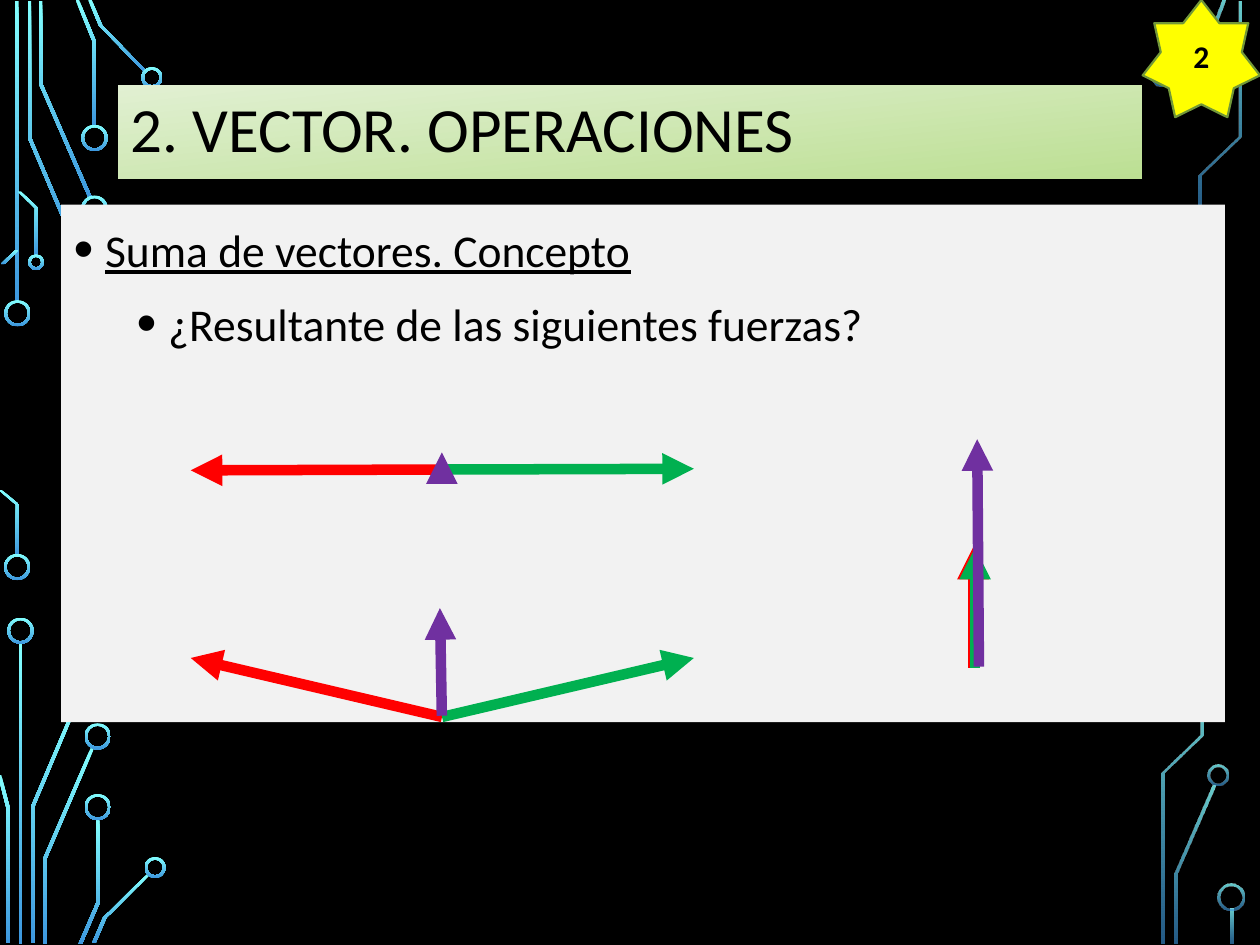
"""Build the slide on adding vectors, with circuit tracks around the edges."""
from lxml import etree
from pptx import Presentation
from pptx.dml import color
from pptx.enum import shapes, text
from pptx.oxml import ns
from pptx.util import Pt


def paint(fill, *colours, angle=270):
    if len(colours) == 1:
        fill.solid()
        fill.fore_color.rgb = color.RGBColor.from_string(colours[0])
        return
    fill.gradient()
    fill.gradient_angle = angle
    for stop, colour in zip(fill.gradient_stops, colours):
        stop.color.rgb = color.RGBColor.from_string(colour)


def write(p, content, size, align=text.PP_ALIGN.LEFT, bold=False, underline=False,
          spacing=1.0, before=0, indent=None):
    p.alignment, p.line_spacing, p.space_before = align, spacing, Pt(before)
    if indent is not None:
        ppr = p._p.get_or_add_pPr()
        ppr.set("marL", str(Pt(indent)))
        ppr.set("indent", str(Pt(-18)))
        etree.SubElement(ppr, ns.qn("a:buSzPct")).set("val", "125000")
        etree.SubElement(ppr, ns.qn("a:buFont")).set("typeface", "Arial")
        etree.SubElement(ppr, ns.qn("a:buChar")).set("char", "•")
    r = p.add_run()
    r.text = content
    r.font.name, r.font.size = "Calibri", Pt(size)
    r.font.bold, r.font.underline = bold, underline
    paint(r.font.fill, "000000")


prs = Presentation()
prs.slide_width, prs.slide_height = Pt(720), Pt(540)
s = prs.slides.add_slide(prs.slide_layouts[5])
paint(s.background.fill, "000000")

left_tracks = [
    [(8.6, 0.7), (8.6, 172.8)],
    [(15.8, 0.7), (15.8, 78.5), (43.2, 142.9)],
    [(22.3, 0.7), (22.3, 48), (50.4, 112.5)],
    [(43.2, 0), (52.9, 23.8), (52.9, 72)],
    [(50.4, 0), (56.5, 14.6), (82.1, 41)],
    [(0.4, 151), (9, 142.6)],
    [(-0.9, 280), (9.1, 288.4), (9.1, 317.5)],
    [(10, 109.4), (20, 119), (20, 146)],
    [(10.6, 367), (10.6, 539.3)],
    [(17.5, 538.6), (17.5, 461.5), (44.8, 397)],
    [(3.6, 538.6), (3.6, 461.5), (-1.2, 443)],
    [(24.5, 539.3), (24.5, 491), (52, 427)],
    [(44.8, 539.6), (54.9, 516.2), (54.9, 468)],
    [(52.6, 539), (58.8, 524.5), (84.5, 499)],
]
right_tracks = [
    [(666.9, 40), (693, 14.4), (698.4, 0)],
    [(671, 539.3), (671, 499), (692.6, 448.7)],
    [(684.9, 121.7), (684.9, 99.7), (707.2, 77.4), (707.2, 0.7)],
    [(664, 539.3), (664, 441.7), (685.6, 420), (685.6, 397.4)],
    [(702.9, 519), (702.9, 539.3)],
]
left_rings = [(10, 179, 15), (9.8, 324, 15), (54, 119.2, 15), (54, 78.8, 15),
              (86.8, 44.3, 12), (20.6, 149.8, 9), (11.7, 360.4, 15),
              (55.8, 420.8, 15), (55.8, 461.2, 15), (88.6, 495.7, 12)]
right_rings = [(663.8, 43.6, 12), (696, 443, 12), (703.4, 512.6, 15)]

for tracks, rings, opacities in ((left_tracks, left_rings, (100, 100)),
                                 (right_tracks, right_rings, (80, 60))):
    parts = []
    for track in tracks:
        edge = track + [(x + 2, y) for x, y in reversed(track)]
        points = [(Pt(x), Pt(y)) for x, y in edge]
        builder = s.shapes.build_freeform(*points[0])
        builder.add_line_segments(points[1:], close=True)
        parts.append(builder.convert_to_shape())
    for x, y, d in rings:
        sp = s.shapes.add_shape(shapes.MSO_SHAPE.DONUT, Pt(x - d / 2), Pt(y - d / 2), Pt(d), Pt(d))
        sp.adjustments[0] = 1.5 / d
        parts.append(sp)
    for sp in parts:
        sp.shadow.inherit = False
        sp.line.fill.background()
        paint(sp.fill, "82FFFF", "3D97DE")
        for clr, opacity in zip(sp._element.spPr.iter(ns.qn("a:srgbClr")), opacities):
            etree.SubElement(clr, ns.qn("a:alpha")).set("val", str(opacity * 1000))

title = s.shapes.title
title.left, title.top, title.width, title.height = Pt(67.5), Pt(48.8), Pt(585), Pt(53.5)
paint(title.fill, "E1F0D2", "BCDF93", angle=276)
title.text_frame.vertical_anchor = text.MSO_ANCHOR.MIDDLE
write(title.text_frame.paragraphs[0], "2. VECTOR. OPERACIONES", 36, spacing=0.9)
s.shapes._spTree.append(title._element)

body = s.shapes.add_textbox(Pt(35), Pt(117), Pt(665), Pt(295.7))
paint(body.fill, "F2F2F2")
tf = body.text_frame
tf.word_wrap = True
write(tf.paragraphs[0], "Suma de vectores. Concepto", 26, underline=True, spacing=1.2, indent=18)
write(tf.add_paragraph(), "¿Resultante de las siguientes fuerzas?", 26, spacing=1.2, before=5, indent=54)

red, green, purple = "FF0000", "00B050", "7030A0"
vectors = [
    (red, 252.6, 268.3, 109, 268.8),
    (green, 252.6, 268.3, 396.5, 267.9),
    (red, 252.6, 409.7, 109, 376),
    (green, 252.6, 409.7, 396.5, 376),
    (red, 556, 381.6, 556, 313),
    (green, 557.2, 381.6, 557.2, 313),
    (purple, 252.5, 263.5, 252.5, 258.5),
    (purple, 252.5, 409, 251.4, 347.5),
    (purple, 559.4, 380.9, 558.4, 251),
]
for colour, x1, y1, x2, y2 in vectors:
    arrow = s.shapes.add_connector(shapes.MSO_CONNECTOR.STRAIGHT, Pt(x1), Pt(y1), Pt(x2), Pt(y2))
    arrow.line.width = Pt(6)
    paint(arrow.line.fill, colour)
    etree.SubElement(arrow.line._get_or_add_ln(), ns.qn("a:tailEnd")).set("type", "triangle")
    etree.SubElement(arrow._element.spPr, ns.qn("a:effectLst"))

star = s.shapes.add_shape(shapes.MSO_SHAPE.STAR_7_POINT, Pt(653), Pt(0), Pt(67), Pt(67))
star.shadow.inherit = False
paint(star.fill, "FFFF00")
paint(star.line.fill, "729838")
star.line.width = Pt(1.25)
star.text_frame.vertical_anchor = text.MSO_ANCHOR.MIDDLE
write(star.text_frame.paragraphs[0], "2", 18, align=text.PP_ALIGN.CENTER, bold=True)

prs.save("out.pptx")
